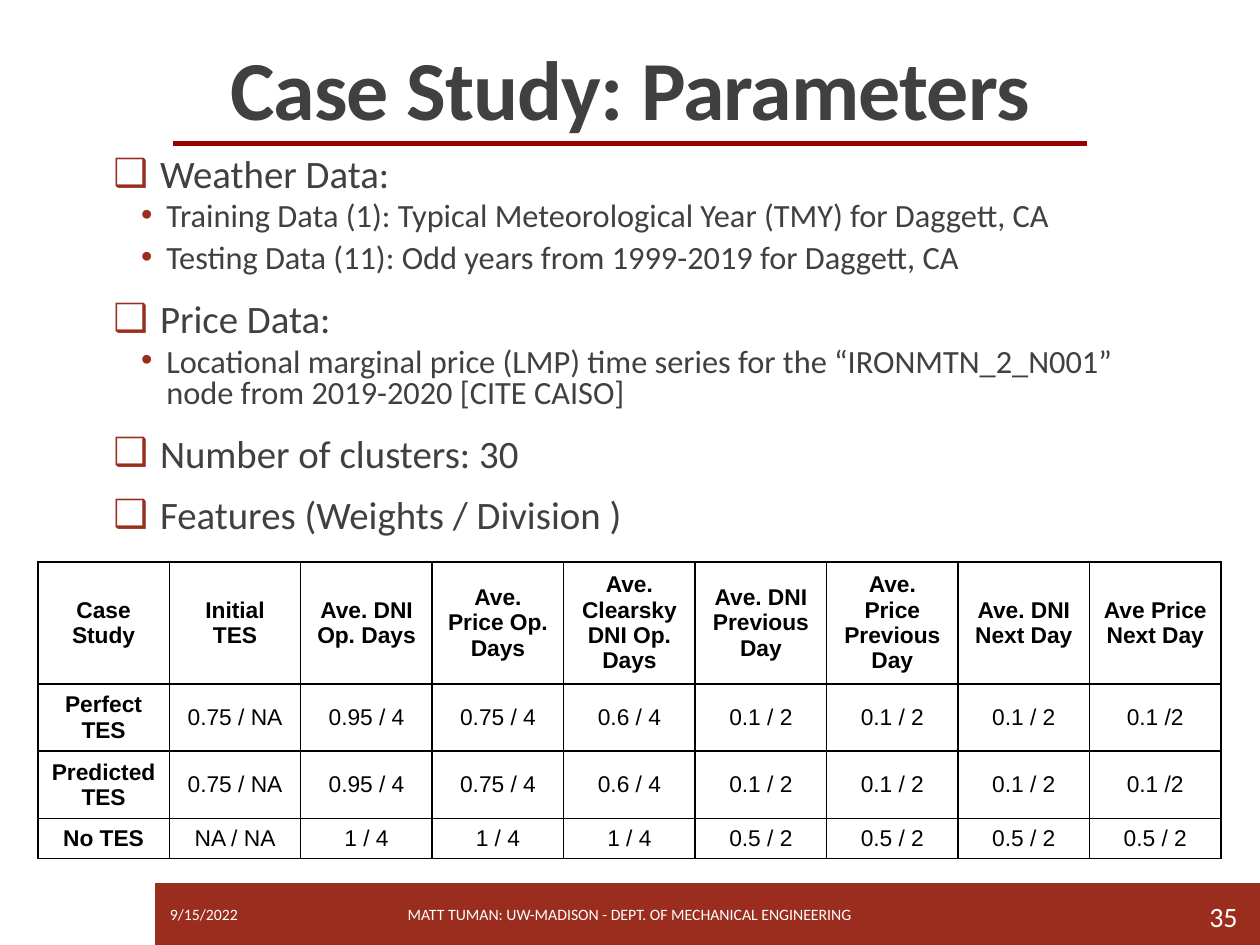
import pptx
import pptx.util
import pptx.dml.color
import pptx.enum.shapes
import pptx.enum.text
import pptx.oxml
import pptx.oxml.ns

Inches, Pt = pptx.util.Inches, pptx.util.Pt
RGB = pptx.dml.color.RGBColor
ALIGN = pptx.enum.text.PP_ALIGN
ANCHOR = pptx.enum.text.MSO_ANCHOR
KIND = pptx.enum.shapes.MSO_SHAPE
RED, RULE = RGB(0x9B, 0x2D, 0x1F), RGB(0x99, 0, 0)
GREY, WHITE, BLACK = RGB(0x40, 0x40, 0x40), RGB(255, 255, 255), RGB(0, 0, 0)

TITLE = "Case Study: Parameters"
BODY = [
    (0, "Weather Data:"),
    (1, "Training Data (1): Typical Meteorological Year (TMY) for Daggett, CA"),
    (1, "Testing Data (11): Odd years from 1999-2019 for Daggett, CA"),
    (0, "Price Data:"),
    (1, "Locational marginal price (LMP) time series for the “IRONMTN_2_N001” "
        "node from 2019-2020 [CITE CAISO]"),
    (0, "Number of clusters: 30"),
    (0, "Features (Weights / Division )"),
]
LEVELS = [
    {"bullet": "❑", "left": 0.37, "hang": 0.37, "size": 22.2, "before": 12, "after": 2},
    {"bullet": "•", "left": 0.42, "hang": 0.2, "size": 18.5, "before": 2, "after": 4},
]
FOOTER = [
    ("9/15/2022", (1.25, 7.06, 1.28, 0.4), 9, ALIGN.LEFT),
    ("MATT TUMAN: UW-MADISON - DEPT. OF MECHANICAL ENGINEERING",
     (2.66, 7.06, 4.67, 0.4), 9, ALIGN.CENTER),
    ("35", (8.84, 7.07, 1.08, 0.4), 16, ALIGN.RIGHT),
]
BARS = [((0, 7.01, 10, 0.49), RED), ((0, 6.99, 1.23, 0.51), WHITE)]
TABLE = [
    ["Case Study", "Initial TES", "Ave. DNI Op. Days", "Ave. Price Op. Days",
     "Ave. Clearsky DNI Op. Days", "Ave. DNI Previous Day",
     "Ave. Price Previous Day", "Ave. DNI Next Day", "Ave Price Next Day"],
    ["Perfect TES", "0.75 / NA", "0.95 / 4", "0.75 / 4", "0.6 / 4",
     "0.1 / 2", "0.1 / 2", "0.1 / 2", "0.1 /2"],
    ["Predicted TES", "0.75 / NA", "0.95 / 4", "0.75 / 4", "0.6 / 4",
     "0.1 / 2", "0.1 / 2", "0.1 / 2", "0.1 /2"],
    ["No TES", "NA / NA", "1 / 4", "1 / 4", "1 / 4",
     "0.5 / 2", "0.5 / 2", "0.5 / 2", "0.5 / 2"],
]
HEIGHTS = [0.94, 0.51, 0.51, 0.3]
WIDTH = 9.39


def put(item, values):
    for name, value in values.items():
        setattr(item, name, value)


def box(values):
    return [Inches(value) for value in values]


def place(shape, area):
    put(shape, dict(zip(("left", "top", "width", "height"), box(area))))


def node(text):
    head, tail = text.split(" ", 1)
    return pptx.oxml.parse_xml(f"<{head} {pptx.oxml.ns.nsdecls('a')} {tail}")


def write(para, text, size, color, align=ALIGN.LEFT, face="Calibri", bold=False):
    run = para.add_run()
    run.text = text
    para.alignment = align
    put(run.font, {"size": Pt(size), "name": face, "bold": bold})
    run.font.color.rgb = color
    return run


def add_bars(slide):
    for area, color in BARS:
        bar = slide.shapes.add_shape(KIND.RECTANGLE, *box(area))
        bar.shadow.inherit = False
        bar.fill.solid()
        bar.fill.fore_color.rgb = color
        bar.line.fill.background()
    rule = slide.shapes.add_connector(
        pptx.enum.shapes.MSO_CONNECTOR.STRAIGHT, *box((1.37, 1.14, 8.63, 1.14)))
    rule.line.color.rgb = RULE
    rule.line.width = Pt(3)
    rule._element.spPr.append(node("a:effectLst />"))


def add_title(slide):
    title = slide.shapes.title
    place(title, (0, 0.31, 10, 0.83))
    frame = title.text_frame
    put(frame, {"vertical_anchor": ANCHOR.BOTTOM, "word_wrap": True,
                "auto_size": pptx.enum.text.MSO_AUTO_SIZE.NONE})
    para = frame.paragraphs[0]
    para.line_spacing = 0.85
    run = write(para, TITLE, 48, GREY, ALIGN.CENTER, bold=True)
    run.font._element.set("spc", "-50")


def add_body(slide):
    body = slide.placeholders[1]
    place(body, (0.9, 1.21, 8.25, 3.25))
    frame = body.text_frame
    put(frame, {"margin_left": 0, "margin_right": 0, "word_wrap": True,
                "vertical_anchor": ANCHOR.TOP,
                "auto_size": pptx.enum.text.MSO_AUTO_SIZE.NONE})
    for index, (level, text) in enumerate(BODY):
        style = LEVELS[level]
        para = frame.add_paragraph() if index else frame.paragraphs[0]
        put(para, {"level": level, "line_spacing": 0.8,
                   "space_before": Pt(style["before"] if index else 0),
                   "space_after": Pt(style["after"])})
        props = para._p.get_or_add_pPr()
        props.set("marL", str(Inches(style["left"])))
        props.set("indent", str(-Inches(style["hang"])))
        props.append(node(f'a:buClr ><a:srgbClr val="{RED}"/></a:buClr>'))
        props.append(node(f'a:buChar char="{style["bullet"]}"/>'))
        write(para, text, style["size"], GREY)


def add_footer(slide):
    for text, area, size, align in FOOTER:
        frame = slide.shapes.add_textbox(*box(area)).text_frame
        put(frame, {"word_wrap": True, "vertical_anchor": ANCHOR.MIDDLE})
        write(frame.paragraphs[0], text, size, WHITE, align)


def add_table(slide):
    count = len(TABLE[0])
    area = box((0.3, 4.46, WIDTH, sum(HEIGHTS)))
    table = slide.shapes.add_table(len(TABLE), count, *area).table
    put(table, {"first_row": False, "horz_banding": False})
    for col in table.columns:
        col.width = Inches(WIDTH / count)
    for r, texts in enumerate(TABLE):
        table.rows[r].height = Inches(HEIGHTS[r])
        for c, text in enumerate(texts):
            cell = table.cell(r, c)
            cell.vertical_anchor = ANCHOR.MIDDLE
            props = cell._tc.get_or_add_tcPr()
            for side in "LRTB":
                props.append(node(
                    f'a:ln{side} w="{Pt(1)}"><a:solidFill>'
                    f'<a:srgbClr val="{BLACK}"/></a:solidFill></a:ln{side}>'))
            cell.fill.background()
            write(cell.text_frame.paragraphs[0], text, 13, BLACK,
                  ALIGN.CENTER, "Arial", r == 0 or c == 0)


def main():
    deck = pptx.Presentation()
    put(deck, {"slide_width": Inches(10), "slide_height": Inches(7.5)})
    slide = deck.slides.add_slide(deck.slide_layouts[1])
    for build in (add_bars, add_title, add_footer, add_body, add_table):
        build(slide)
    deck.save("out.pptx")


if __name__ == "__main__":
    main()
